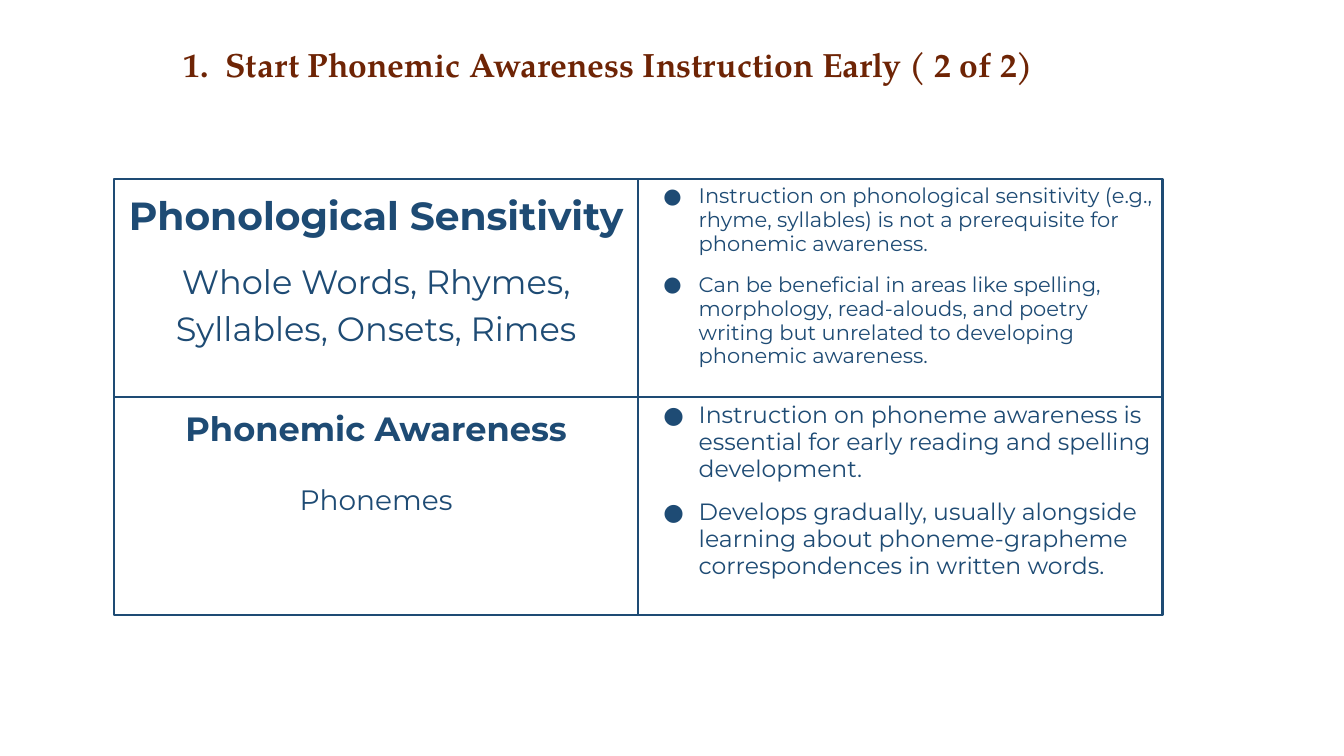
import dataclasses
import typing

import lxml.etree
import pptx
import pptx.dml.color
import pptx.enum.text
import pptx.oxml.ns
import pptx.util

ALIGN = pptx.enum.text.PP_ALIGN
ANCHOR = pptx.enum.text.MSO_ANCHOR


@dataclasses.dataclass(frozen=True)
class Theme:
    brown: str = "6E2405"
    blue: str = "1E4B74"
    serif: str = "TeX Gyre Pagella"
    sans: str = "Montserrat"
    huge: float = 28
    large: float = 24
    mid: float = 20
    list_big: float = 16.8
    list_small: float = 15
    edge: float = 1.5


@dataclasses.dataclass(frozen=True)
class Grid:
    left: float = 1.13
    top: float = 1.78
    wide: float = 5.2
    high: float = 2.16
    cols: int = 2


@dataclasses.dataclass(frozen=True)
class Mark:
    tag: str
    name: str
    value: str
    left: float
    hang: float


@dataclasses.dataclass(frozen=True)
class Line:
    text: str
    size: float
    bold: bool = False
    pitch: float = 1.15
    after: float = 0
    mark: typing.Optional[Mark] = None


THEME = Theme()
GRID = Grid()
DOT = Mark("buChar", "char", "●", 0.5, -0.35)
COUNT = Mark("buAutoNum", "type", "arabicPeriod", 0.5, -0.42)


def point(text: str, size: float, after: float = 0) -> Line:
    return Line(text, size, pitch=0.95, after=after, mark=DOT)


TITLE = Line("Start Phonemic Awareness Instruction Early ( 2 of 2)", THEME.large, True, mark=COUNT)
CELLS = [
    [
        Line("Phonological Sensitivity", THEME.huge, True, after=12),
        Line("Whole Words, Rhymes,", THEME.large),
        Line("Syllables, Onsets, Rimes", THEME.large),
    ],
    [
        point("Instruction on phonological sensitivity (e.g., rhyme, syllables) "
              "is not a prerequisite for phonemic awareness.", THEME.list_small, 12),
        point("Can be beneficial in areas like spelling, morphology, read-alouds, and poetry "
              "writing but unrelated to developing phonemic awareness.", THEME.list_small),
    ],
    [
        Line("Phonemic Awareness", THEME.large, True, after=12),
        Line("Phonemes", THEME.mid, pitch=1.5),
    ],
    [
        point("Instruction on phoneme awareness is essential for early reading "
              "and spelling development.", THEME.list_big, 12),
        point("Develops gradually, usually alongside learning about phoneme-grapheme "
              "correspondences in written words.", THEME.list_big),
    ],
]


def add_mark(para, mark: typing.Optional[Mark], face: str, tint: str) -> None:
    props = para._p.get_or_add_pPr()
    props.set("marL", str(pptx.util.Inches(mark.left if mark else 0)))
    props.set("indent", str(pptx.util.Inches(mark.hang if mark else 0)))

    def add(root, tag: str, **attrs: str):
        return lxml.etree.SubElement(root, pptx.oxml.ns.qn("a:" + tag), attrs)

    if mark is None:
        add(props, "buNone")
        return
    add(add(props, "buClr"), "srgbClr", val=tint)
    add(props, "buFont", typeface=face)
    add(props, mark.tag, **{mark.name: mark.value})


def place(shape, left: float, top: float, wide: float, high: float) -> None:
    shape.left, shape.top, shape.width, shape.height = map(
        pptx.util.Inches, (left, top, wide, high))


def write(shape, lines: typing.List[Line], face: str, tint: str, anchor) -> None:
    frame = shape.text_frame
    frame.word_wrap = True
    frame.auto_size = pptx.enum.text.MSO_AUTO_SIZE.NONE
    frame.vertical_anchor = anchor
    frame.margin_left = frame.margin_right = pptx.util.Inches(0.1)
    frame.margin_top = frame.margin_bottom = pptx.util.Inches(0.05)
    for num, line in enumerate(lines):
        para = frame.add_paragraph() if num else frame.paragraphs[0]
        para.text = line.text
        add_mark(para, line.mark, face, tint)
        para.alignment = ALIGN.LEFT if line.mark else ALIGN.CENTER
        para.line_spacing = line.pitch
        para.space_before = pptx.util.Pt(0)
        para.space_after = pptx.util.Pt(line.after)
        font = para.font
        font.name = face
        font.size = pptx.util.Pt(line.size)
        font.bold = line.bold
        font.color.rgb = pptx.dml.color.RGBColor.from_string(tint)


def main() -> None:
    deck = pptx.Presentation()
    deck.slide_width = pptx.util.Inches(13.33)
    deck.slide_height = pptx.util.Inches(7.5)
    slide = deck.slides.add_slide(deck.slide_layouts.get_by_name("Comparison"))

    title = slide.shapes.title
    place(title, 1.64, 0.2, 10.78, 0.82)
    write(title, [TITLE], THEME.serif, THEME.brown, ANCHOR.MIDDLE)

    bodies = [item for item in slide.placeholders if item.placeholder_format.idx > 0]
    for num, (body, lines) in enumerate(zip(bodies, CELLS)):
        row, col = divmod(num, GRID.cols)
        place(body, GRID.left + col * GRID.wide, GRID.top + row * GRID.high,
              GRID.wide, GRID.high)
        body.line.color.rgb = pptx.dml.color.RGBColor.from_string(THEME.blue)
        body.line.width = pptx.util.Pt(THEME.edge)
        write(body, lines, THEME.sans, THEME.blue, ANCHOR.TOP)

    deck.save("out.pptx")


if __name__ == "__main__":
    main()
